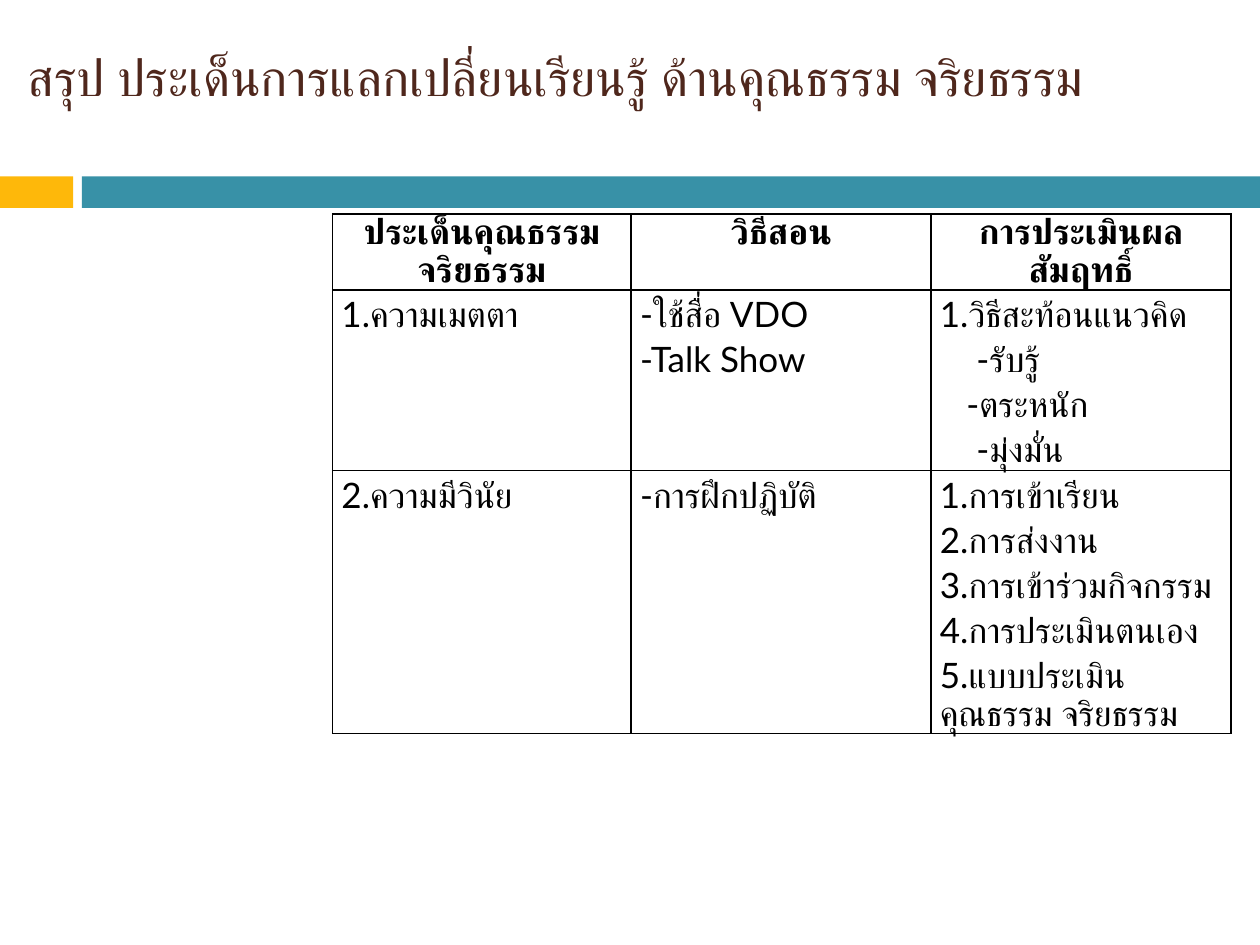
from lxml import etree
from pptx import Presentation
from pptx.dml.color import RGBColor
from pptx.enum.shapes import MSO_SHAPE as Shape
from pptx.enum.text import MSO_ANCHOR as Anchor, PP_ALIGN as Align
from pptx.oxml.ns import qn
from pptx.util import Inches, Pt


def color(value):
    return RGBColor.from_string(value)


def add_borders(cell):
    properties = cell._tc.get_or_add_tcPr()
    for position, side in enumerate(("lnL", "lnR", "lnT", "lnB")):
        line = etree.Element(qn(f"a:{side}"), w=str(Pt(1)))
        fill = etree.SubElement(line, qn("a:solidFill"))
        etree.SubElement(fill, qn("a:srgbClr"), val="000000")
        properties.insert(position, line)


presentation = Presentation()
presentation.slide_width = Inches(10)
presentation.slide_height = Inches(7.5)
slide = presentation.slides.add_slide(presentation.slide_layouts[5])

for left, width, fill in ((0, 0.58, "FEB80A"), (0.65, 9.35, "3891A7")):
    bar = slide.shapes.add_shape(
        Shape.RECTANGLE, Inches(left), Inches(1.4), Inches(width), Inches(0.25)
    )
    bar.shadow.inherit = False
    bar.fill.solid()
    bar.fill.fore_color.rgb = color(fill)
    bar.line.fill.background()

title = slide.shapes.title
title.left, title.top = Inches(0.12), Inches(0.13)
title.width, title.height = Inches(9.61), Inches(0.95)
title.text_frame.text = "สรุป ประเด็นการแลกเปลี่ยนเรียนรู้ ด้านคุณธรรม จริยธรรม"
title.text_frame.vertical_anchor = Anchor.MIDDLE
paragraph = title.text_frame.paragraphs[0]
paragraph.alignment = Align.LEFT
paragraph.font.name = "Lato"
paragraph.font.size = Pt(29)
paragraph.font.color.rgb = color("4F271C")

rows = [
    ["ประเด็นคุณธรรมจริยธรรม", "วิธีสอน", "การประเมินผลสัมฤทธิ์"],
    [
        "1.ความเมตตา",
        "-ใช้สื่อ VDO\n-Talk Show",
        "1.วิธีสะท้อนแนวคิด\n-รับรู้\n-ตระหนัก\n-มุ่งมั่น",
    ],
    [
        "2.ความมีวินัย",
        "-การฝึกปฏิบัติ",
        "1.การเข้าเรียน\n2.การส่งงาน\n3.การเข้าร่วมกิจกรรม\n"
        "4.การประเมินตนเอง\n5.แบบประเมินคุณธรรม จริยธรรม",
    ],
]
row_heights = (0.6, 1.43, 2.09)
indents = {"-รับรู้": 0.29, "-ตระหนัก": 0.21, "-มุ่งมั่น": 0.29}

table = slide.shapes.add_table(
    3, 3, Inches(2.64), Inches(1.7), Inches(7.13), Inches(sum(row_heights))
).table
for column, width in zip(table.columns, (2.37, 2.38, 2.38)):
    column.width = Inches(width)

for row_index, (texts, height) in enumerate(zip(rows, row_heights)):
    table.rows[row_index].height = Inches(height)
    for column_index, text in enumerate(texts):
        cell = table.cell(row_index, column_index)
        cell.text = text
        cell.margin_left = cell.margin_right = Inches(0.07)
        cell.margin_top = cell.margin_bottom = 0
        cell.fill.background()
        add_borders(cell)
        for paragraph in cell.text_frame.paragraphs:
            paragraph.alignment = Align.LEFT if row_index else Align.CENTER
            paragraph.line_spacing = 1.07
            paragraph.font.name = "Lato"
            paragraph.font.size = Pt(20)
            paragraph.font.bold = row_index == 0
            paragraph.font.color.rgb = color("000000")
            if paragraph.text in indents:
                indent = Inches(indents[paragraph.text])
                paragraph._p.get_or_add_pPr().set("marL", str(indent))

presentation.save("out.pptx")
